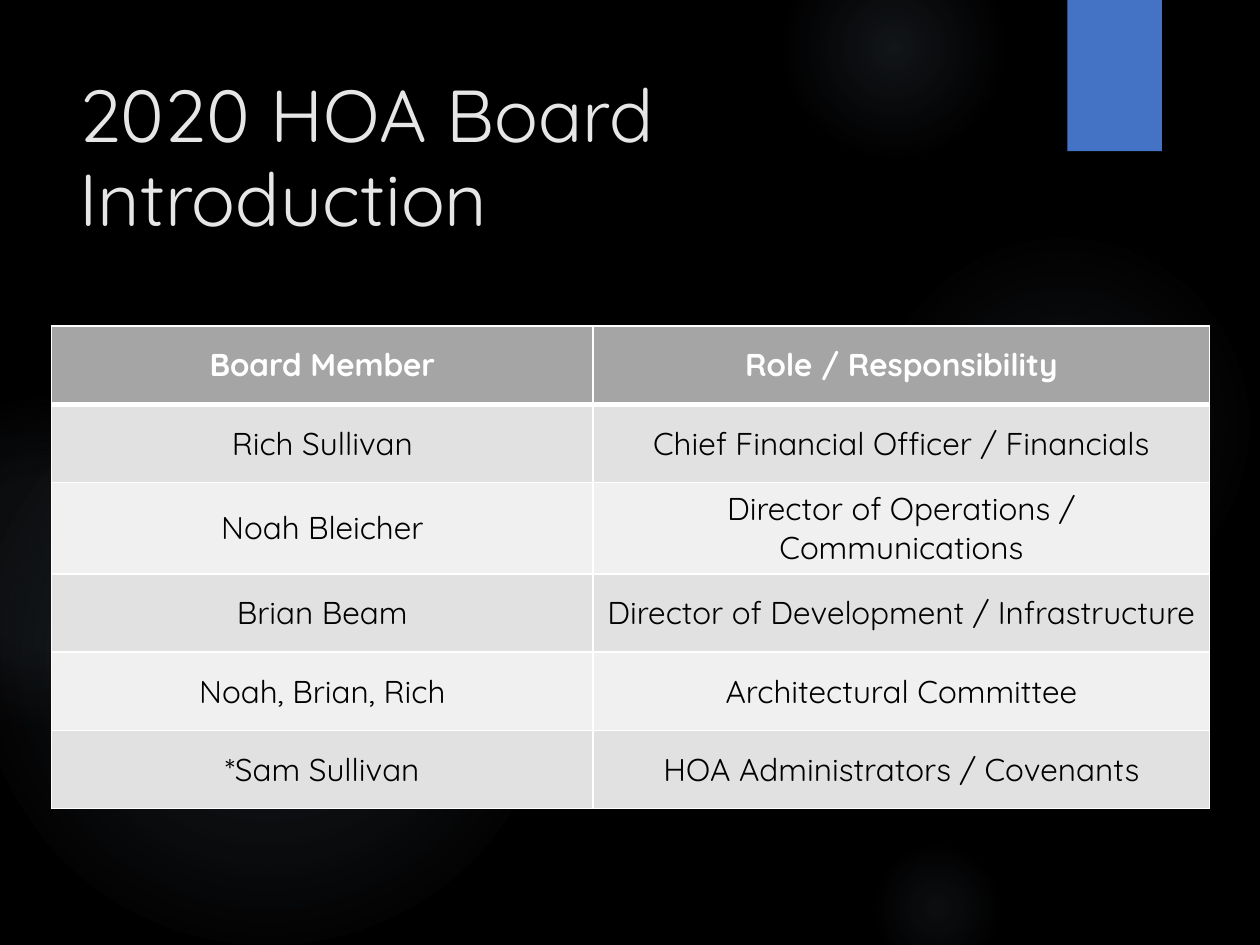
import pptx
import pptx.dml.color
import pptx.enum.shapes
import pptx.enum.text
import pptx.oxml
import pptx.oxml.ns
import pptx.util

SHAPES = pptx.enum.shapes.MSO_SHAPE
ALIGN = pptx.enum.text.PP_ALIGN
MIDDLE = pptx.enum.text.MSO_ANCHOR.MIDDLE
NAMESPACE = pptx.oxml.ns.nsdecls("a")

GLOWS = [
    (82.7, 22, 37, [(0, 7), (36, 6), (69, 0)]),
    (74.6, -6, 21, [(0, 14), (36, 7), (73, 0)]),
    (82.7, 80, 13, [(0, 9), (36, 5), (66, 0)]),
    (-2, 35, 55, [(0, 11), (36, 10), (75, 0)]),
    (-11, 38, 31, [(0, 8), (36, 8), (72, 0)]),
]
BOARD = [
    ("Board Member", "Role / Responsibility"),
    ("Rich Sullivan", "Chief Financial Officer / Financials"),
    ("Noah Bleicher", "Director of Operations / Communications"),
    ("Brian Beam", "Director of Development / Infrastructure"),
    ("Noah, Brian, Rich", "Architectural Committee"),
    ("*Sam Sullivan", "HOA Administrators / Covenants"),
]


def color(value):
    return pptx.dml.color.RGBColor.from_string(value)


def grid(units):
    return pptx.util.Inches(units / 12)


def write(frame, text, size=18, fill="000000", bold=False, align=ALIGN.CENTER,
          spacing=1.0, font="Quicksand"):
    para = frame.paragraphs[0]
    para.text = text
    para.alignment = align
    para.line_spacing = spacing
    for span in para.runs:
        span.font.name = font
        span.font.size = pptx.util.Pt(size)
        span.font.bold = bold
        span.font.color.rgb = color(fill)


class BoardSlide:
    glow_color = "8497B0"
    accent = "4472C4"
    title_color = "E7E6E6"
    header_fill = "A5A5A5"
    band_fills = ("F0F0F0", "E1E1E1")
    rule_color = "FFFFFF"

    def __init__(self, deck):
        self.page = deck.slides.add_slide(deck.slide_layouts[5])
        self.page.background.fill.solid()
        self.page.background.fill.fore_color.rgb = color("000000")

    def shape(self, kind, left, top, width, height):
        box = self.page.shapes.add_shape(
            kind, grid(left), grid(top), grid(width), grid(height))
        box.shadow.inherit = False
        box.line.fill.background()
        return box

    def glow(self, left, top, size, stops):
        circle = self.shape(SHAPES.OVAL, left, top, size, size)
        stop_xml = "".join(
            f'<a:gs pos="{place * 1000}"><a:srgbClr val="{self.glow_color}">'
            f'<a:alpha val="{opacity * 1000}"/></a:srgbClr></a:gs>'
            for place, opacity in stops)
        gradient = pptx.oxml.parse_xml(
            f'<a:gradFill {NAMESPACE}><a:gsLst>{stop_xml}</a:gsLst>'
            '<a:path path="circle"><a:fillToRect l="50000" t="50000" '
            'r="50000" b="50000"/></a:path></a:gradFill>')
        circle.element.spPr.find(pptx.oxml.ns.qn("a:prstGeom")).addnext(gradient)

    def tab(self, left, top, width, height):
        box = self.shape(SHAPES.RECTANGLE, left, top, width, height)
        box.fill.solid()
        box.fill.fore_color.rgb = color(self.accent)

    def title(self, text, left, top, width, height):
        box = self.page.shapes.title
        box.left, box.top = grid(left), grid(top)
        box.width, box.height = grid(width), grid(height)
        box.element.getparent().append(box.element)
        frame = box.text_frame
        frame.word_wrap = True
        frame.auto_size = pptx.enum.text.MSO_AUTO_SIZE.NONE
        frame.vertical_anchor = MIDDLE
        write(frame, text, size=42, fill=self.title_color,
              align=ALIGN.LEFT, spacing=0.95)

    def borders(self, cell, widths):
        properties = cell._tc.get_or_add_tcPr()
        for place, (side, width) in enumerate(widths.items()):
            properties.insert(place, pptx.oxml.parse_xml(
                f'<a:ln{side} {NAMESPACE} w="{pptx.util.Pt(width)}"><a:solidFill>'
                f'<a:srgbClr val="{self.rule_color}"/></a:solidFill></a:ln{side}>'))

    def table(self, rows, left, top, widths, row_height):
        grid_table = self.page.shapes.add_table(
            len(rows), len(widths), grid(left), grid(top),
            grid(sum(widths)), grid(row_height * len(rows))).table
        for column, width in zip(grid_table.columns, widths):
            column.width = grid(width)
        for row_index, texts in enumerate(rows):
            header = row_index == 0
            fill = self.header_fill if header else self.band_fills[row_index % 2]
            top_rule = 3 if row_index == 1 else 1
            bottom_rule = 3 if header else 1
            for column_index, text in enumerate(texts):
                cell = grid_table.cell(row_index, column_index)
                cell.vertical_anchor = MIDDLE
                cell.fill.solid()
                cell.fill.fore_color.rgb = color(fill)
                self.borders(cell, {"L": 1, "R": 1, "T": top_rule, "B": bottom_rule})
                write(cell.text_frame, text, bold=header,
                      fill="FFFFFF" if header else "000000")


def main():
    deck = pptx.Presentation()
    deck.slide_width, deck.slide_height = grid(120), grid(90)
    board = BoardSlide(deck)
    for glow in GLOWS:
        board.glow(*glow)
    board.tab(101.65, 0, 9, 14.4)
    board.title("2020 HOA Board\vIntroduction", 6.35, 6, 92.65, 18.4)
    board.table(BOARD, 4.9, 31.05, (51.6, 58.7), 7.45)
    deck.save("out.pptx")


if __name__ == "__main__":
    main()
